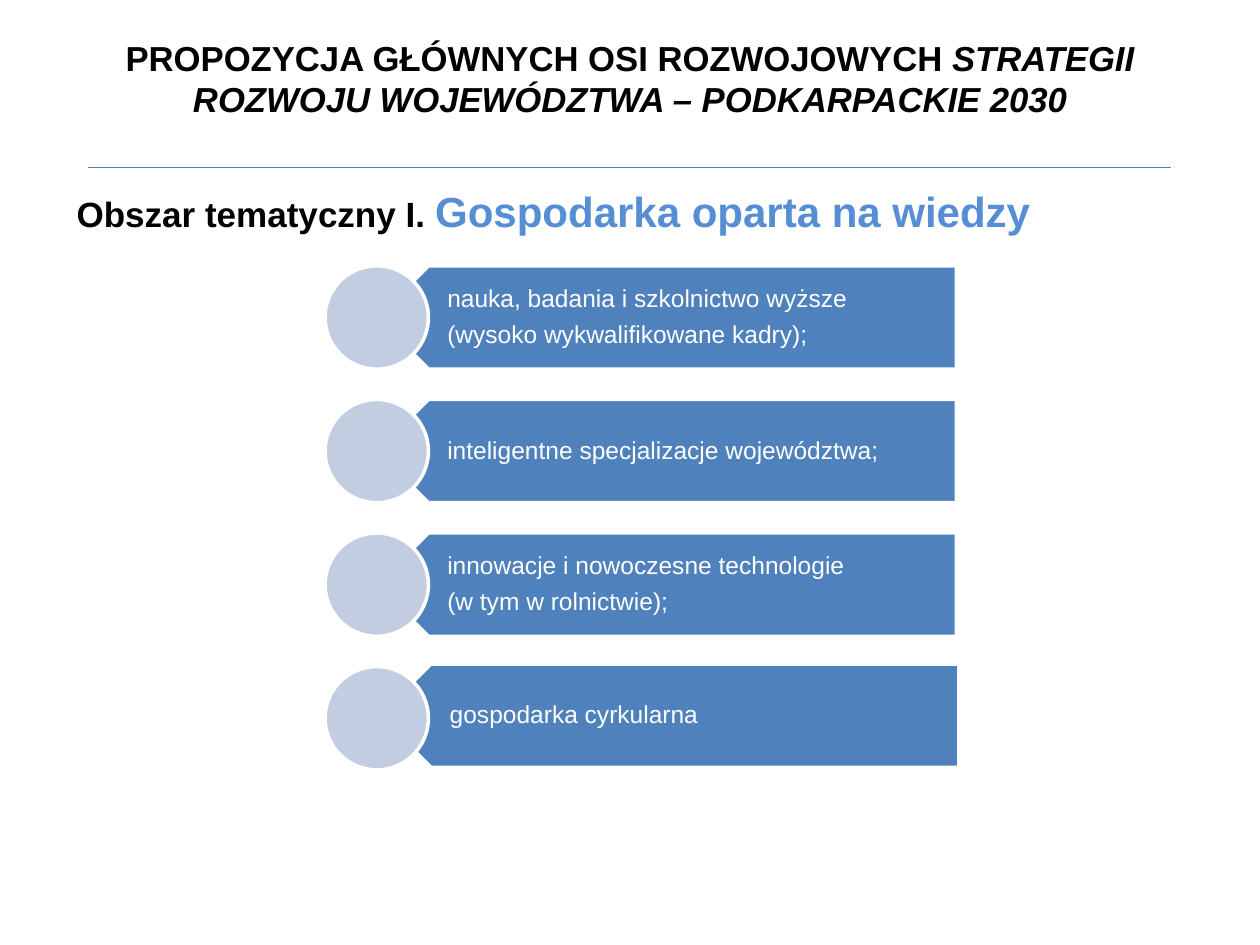
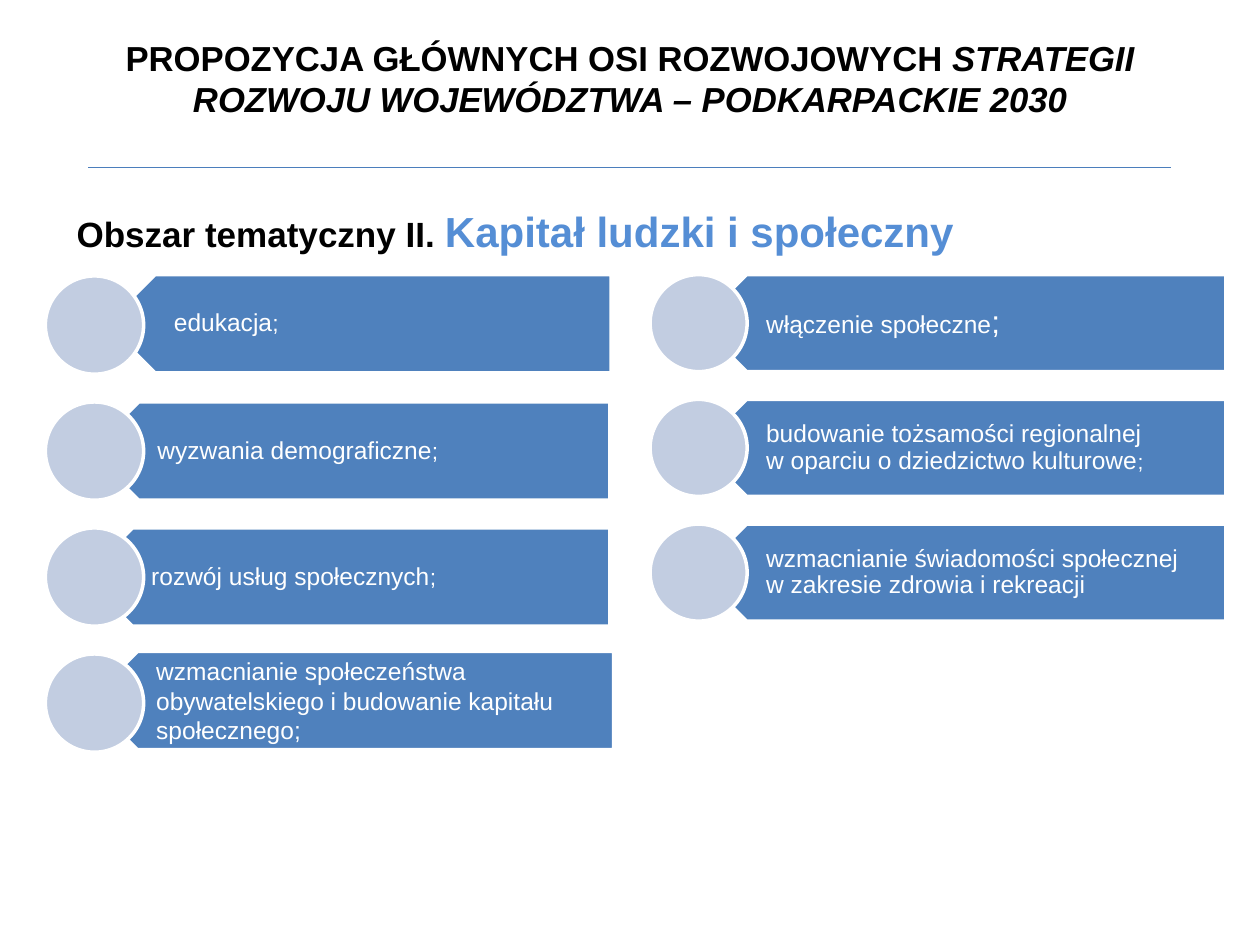
from dataclasses import dataclass

from lxml.etree import SubElement
from pptx import Presentation
from pptx.dml.color import RGBColor
from pptx.enum.shapes import MSO_CONNECTOR, MSO_SHAPE
from pptx.enum.text import MSO_ANCHOR, PP_ALIGN
from pptx.oxml.ns import qn
from pptx.util import Inches, Pt

FONT = "Arial"
BLACK, WHITE = "000000", "FFFFFF"
PLATE, DOT, RULE, ACCENT = "4F81BD", "C2CDE1", "4B7EBC", "558ED5"


@dataclass
class Row:
    """One bar of a chain; shift and lift move it relative to its dot."""
    paras: list
    shift: float
    width: float
    lift: float = 0
    align: PP_ALIGN = PP_ALIGN.JUSTIFY
    lead: float = 0.9
    after: float = 5.6


def paint(hue):
    """Turn a hex string into a colour."""
    return RGBColor.from_string(hue)


def put(shapes, box, paras, size=14, color=WHITE, bold=False, align=PP_ALIGN.LEFT,
        anchor=MSO_ANCHOR.TOP, pad=(0.1, 0.05, 0.1, 0.05), lead=None, after=0):
    """Add a text box; each paragraph is a list of (text, format) runs."""
    frame = shapes.add_textbox(*map(Inches, box)).text_frame
    frame.word_wrap = True
    frame.vertical_anchor = anchor
    (frame.margin_left, frame.margin_top,
     frame.margin_right, frame.margin_bottom) = map(Inches, pad)
    for i, runs in enumerate(paras):
        para = frame.add_paragraph() if i else frame.paragraphs[0]
        para.alignment = align
        para.line_spacing = lead
        para.space_after = Pt(after)
        for text, style in runs:
            for j, line in enumerate(text.split("\n")):
                if j:
                    para.add_line_break()
                run = para.add_run()
                run.text = line
                font = run.font
                font.name = FONT
                font.size = Pt(style.get("size", size))
                font.bold = bold
                font.italic = style.get("italic", False)
                font.color.rgb = paint(style.get("color", color))


def form(shapes, kind, box, hue):
    """Add a filled preset shape with a white outline."""
    shape = shapes.add_shape(kind, *map(Inches, box))
    shape.shadow.inherit = False
    shape.fill.solid()
    shape.fill.fore_color.rgb = paint(hue)
    shape.line.color.rgb = paint(WHITE)
    shape.line.width = Pt(2)
    return shape


def chain(slide, left, top, size, step, inset, rows):
    """Stack bars with dots down from the given corner, as one group."""
    shapes = slide.shapes.add_group_shape().shapes
    for i, row in enumerate(rows):
        y = top + i * step
        x = left + row.shift
        bar = form(shapes, MSO_SHAPE.PENTAGON, (x, y + row.lift, row.width, size), PLATE)
        bar.rotation = 180
        put(shapes, (x + 0.2, y + row.lift, row.width - 0.2, size), row.paras,
            align=row.align, anchor=MSO_ANCHOR.MIDDLE, pad=(inset, 0.06, 0.11, 0.06),
            lead=row.lead, after=row.after)
        form(shapes, MSO_SHAPE.OVAL, (left, y, size, size), DOT)


def start(deck, area, topic, lead=None):
    """Add a slide with the shared title, rule and topic heading."""
    slide = deck.slides.add_slide(deck.slide_layouts[6])
    title = [("PROPOZYCJA GŁÓWNYCH OSI ROZWOJOWYCH ", {}),
             ("STRATEGII ROZWOJU WOJEWÓDZTWA – PODKARPACKIE 2030", {"italic": True})]
    put(slide.shapes, (0.5, 0.24, 9, 0.9), [title], size=19.8, color=BLACK,
        bold=True, align=PP_ALIGN.CENTER)
    head = [(f"Obszar tematyczny {area}. ", {}), (topic, {"size": 24, "color": ACCENT})]
    put(slide.shapes, (0.51, 1.42, 9, 0.6), [head], size=20, color=BLACK,
        bold=True, lead=lead)
    rule = slide.shapes.add_connector(
        MSO_CONNECTOR.STRAIGHT, *map(Inches, (0.7, 1.33, 9.29, 1.33)))
    rule.line.color.rgb = paint(RULE)
    rule.line.width = Pt(0.75)
    SubElement(rule._element.spPr, qn("a:effectLst"))
    return slide


def plain(*lines):
    """Make one unformatted paragraph per line."""
    return [[(line, {})] for line in lines]


def ended(text, size):
    """Make a paragraph closed by a semicolon of its own size."""
    return [[(text, {}), (";", {"size": size})]]


def science(deck):
    """Build the slide on the knowledge economy."""
    slide = start(deck, "I", "Gospodarka oparta na wiedzy")
    chain(slide, 2.58, 2.11, 0.82, 1.06, 0.36, [
        Row(plain("nauka, badania i szkolnictwo wyższe",
                  "(wysoko wykwalifikowane kadry);"), 0.41, 4.6),
        Row(plain("inteligentne specjalizacje województwa;"), 0.41, 4.6),
        Row(plain("innowacje i nowoczesne technologie",
                  "(w tym w rolnictwie);"), 0.41, 4.6),
        Row(plain("gospodarka cyrkularna"), 0.43, 4.6, -0.02),
    ])


def people(deck):
    """Build the slide on human and social capital."""
    slide = start(deck, "II", "Kapitał ludzki i społeczny", lead=1.4)
    side = PP_ALIGN.LEFT
    chain(slide, 0.36, 2.19, 0.78, 1, 0.34, [
        Row(ended("edukacja", 13), 0.48, 4.01, -0.01),
        Row(ended("wyzwania demograficzne", 13), 0.35, 4.13),
        Row(ended("rozwój usług społecznych", 13), 0.3, 4.18),
        Row(plain("wzmacnianie społeczeństwa obywatelskiego i budowanie "
                  "kapitału społecznego;"), 0.34, 4.17, -0.02, side, 1, 0),
    ])
    chain(slide, 5.16, 2.18, 0.77, 0.99, 0.34, [
        Row(ended("włączenie społeczne", 18), 0.38, 4.19),
        Row(ended("budowanie tożsamości regionalnej\nw oparciu o dziedzictwo kulturowe",
                  12), 0.38, 4.19, align=side),
        Row(plain("wzmacnianie świadomości społecznej\nw zakresie zdrowia i rekreacji"),
            0.38, 4.19, align=side),
    ])


def main():
    """Build and save the deck."""
    deck = Presentation()
    deck.slide_width, deck.slide_height = Inches(10), Inches(7.5)
    science(deck)
    people(deck)
    deck.save("out.pptx")


if __name__ == "__main__":
    main()
